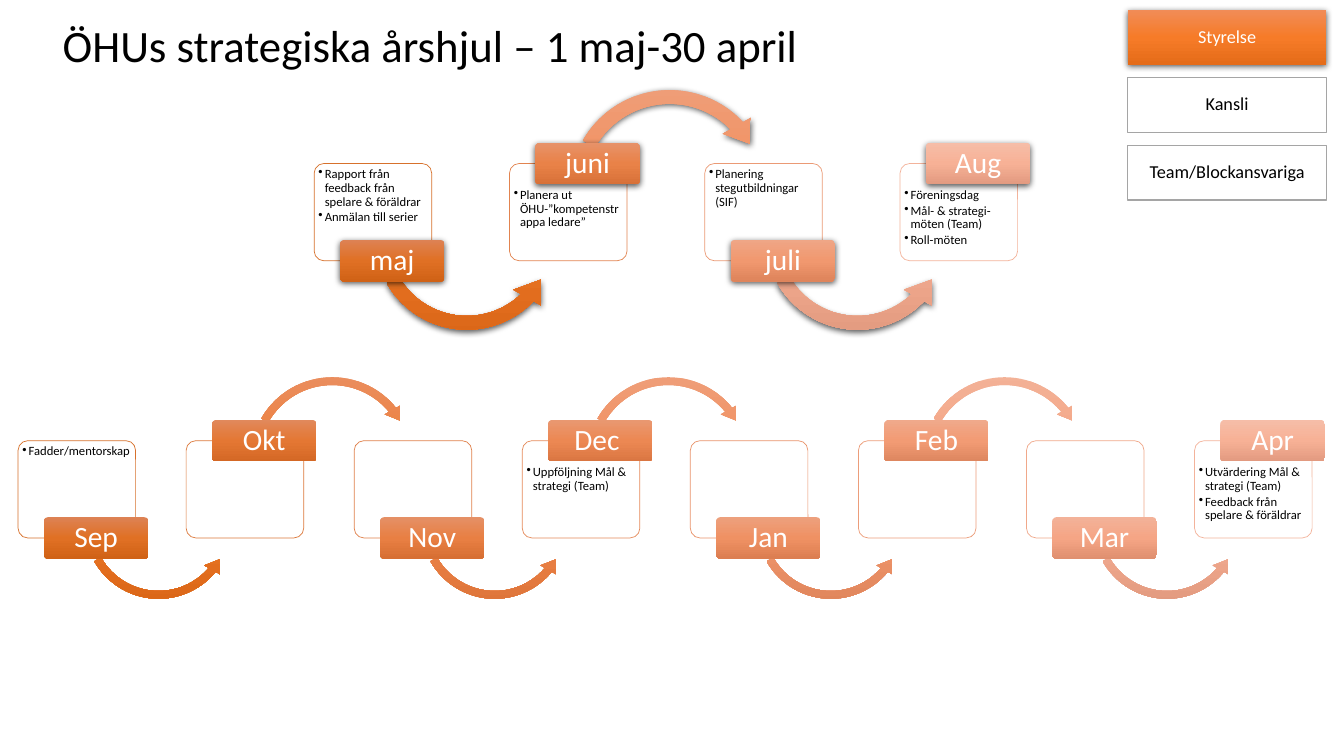
from copy import deepcopy
from dataclasses import dataclass

from pptx import Presentation
from pptx import oxml
from pptx import util as u
from pptx.dml import color
from pptx.enum import shapes, text
from pptx.oxml import ns


@dataclass(frozen=True)
class Theme:
    font: str = "Calibri"
    title_size: float = 32
    month_size: float = 21
    legend_size: float = 13
    note_size: float = 9
    black: str = "000000"
    white: str = "FFFFFF"
    grey: str = "A5A5A5"
    accent: tuple = ("F18C57", "F67B28", "E56C19")


theme = Theme()
KIND = shapes.MSO_SHAPE
SHADOW = (
    f'<a:outerShdw {ns.nsdecls("a")} blurRad="57150" dist="19050" dir="5400000" algn="ctr" rotWithShape="0">'
    f'<a:srgbClr val="{theme.black}"><a:alpha val="63000"/></a:srgbClr></a:outerShdw>'
)


def write(frame, lines, size, ink=theme.black, align=text.PP_ALIGN.CENTER,
          anchor=text.MSO_ANCHOR.MIDDLE, inset=(2.5, 2), bullet=False, after=0):
    frame.word_wrap = True
    frame.auto_size = text.MSO_AUTO_SIZE.NONE
    frame.vertical_anchor = anchor
    frame.margin_left = frame.margin_right = u.Pt(inset[0])
    frame.margin_top = frame.margin_bottom = u.Pt(inset[1])
    for number, line in enumerate(lines):
        para = frame.add_paragraph() if number else frame.paragraphs[0]
        if bullet:
            properties = para._p.get_or_add_pPr()
            properties.set("marL", str(u.Pt(4.5)))
            properties.set("indent", str(u.Pt(-4.5)))
            properties.append(oxml.parse_xml(f'<a:buChar {ns.nsdecls("a")} char="•"/>'))
        para.alignment = align
        para.line_spacing = 0.9
        para.space_before = u.Pt(0)
        para.space_after = u.Pt(after)
        span = para.add_run()
        span.text = line
        span.font.name = theme.font
        span.font.size = u.Pt(size)
        span.font.color.rgb = color.RGBColor.from_string(ink)


def add_block(kind, place, fill, line=None, width=0.5, shadow=False, adjust=()):
    """Add a shape; fill is one colour, or three for a vertical gradient."""
    block = page.shapes.add_shape(kind, *map(u.Pt, place))
    for index, value in enumerate(adjust):
        block.adjustments[index] = value
    if isinstance(fill, str):
        block.fill.solid()
        block.fill.fore_color.rgb = color.RGBColor.from_string(fill)
    else:
        block.fill.gradient()
        block.fill.gradient_angle = 270
        stop_list = block._element.spPr.find(".//" + ns.qn("a:gsLst"))
        stop_list.append(deepcopy(stop_list[-1]))
        for stop, position, shade in zip(block.fill.gradient_stops, (0, 0.5, 1), fill):
            stop.position = position
            stop.color.rgb = color.RGBColor.from_string(shade)
    if line:
        block.line.color.rgb = color.RGBColor.from_string(line)
        block.line.width = u.Pt(width)
    else:
        block.line.fill.background()
    block.shadow.inherit = False
    if shadow:
        block._element.spPr.find(ns.qn("a:effectLst")).append(oxml.parse_xml(SHADOW))
    return block


deck = Presentation()
deck.slide_width, deck.slide_height = u.Pt(960), u.Pt(540)
page = deck.slides.add_slide(deck.slide_layouts[5])

title = page.shapes.title
title.left, title.top, title.width, title.height = map(u.Pt, (37.6, 7.2, 830, 54))
write(title.text_frame, ["ÖHUs strategiska årshjul – 1 maj-30 april"], theme.title_size,
      align=text.PP_ALIGN.LEFT, inset=(7.2, 3.6))

# Month: name, notes, box outline, tab gradient, gradient of the arrow to the next month
spring_summer = [
    ("maj", ["Rapport från feedback från spelare & föräldrar", "Anmälan till serier"],
     "D7712C", ("DD8254", "E07024", "D06216"), ("E78756", "EB7626", "DB6718")),
    ("juni", ["Planera ut ÖHU-”kompetenstrappa ledare”"],
     "E28450", ("E79269", "E98248", "D87138"), ("EF9E79", "F28F5D", "DF7D4B")),
    ("juli", ["Planering stegutbildningar (SIF)"],
     "EB9A75", ("EFA686", "F1986F", "DE845B"), ("F5BCA8", "F7B096", "E29A7F")),
    ("Aug", ["Föreningsdag", "Mål- & strategi-möten (Team)", "Roll-möten"],
     "F3B39B", ("F6BDA8", "F7B196", "E29A80"), None),
]
autumn_winter = [
    ("Sep", ["Fadder/mentorskap"],
     "D7712C", ("DD8254", "E07024", "D06216"), ("E78756", "EB7626", "DB6718")),
    ("Okt", [], "DC793B", ("E1895C", "E47733", "D46825"), ("EA8E5F", "EE7E38", "DD6D29")),
    ("Nov", [], "E0814B", ("E59066", "E87F43", "D76F33"), ("EC966B", "F0864B", "DE753A")),
    ("Dec ", ["Uppföljning Mål & strategi (Team)"],
     "E58A5A", ("E99871", "EC8853", "DA7642"), ("EF9E79", "F28F5D", "DF7D4B")),
    ("Jan", [], "E9936A", ("EDA07D", "EF9163", "DC7E51"), ("F1A788", "F49A70", "E0865C")),
    ("Feb", [], "EC9D7A", ("F0A98B", "F29B74", "DE8760"), ("F3B297", "F5A483", "E18F6E")),
    ("Mar", [], "F0A88A", ("F3B299", "F5A585", "E09070"), ("F5BCA8", "F7B096", "E29A7F")),
    ("Apr", ["Utvärdering Mål & strategi (Team)", "Feedback från spelare & föräldrar"],
     "F3B39B", ("F6BDA8", "F7B196", "E29A80"), None),
]

# Arrow: kind, left and top from the box corner, diameter, adjustments
wide_arrows = [
    (KIND.LEFT_CIRCULAR_ARROW, 36.7, -19.5, 144.7, (0.068, 9.122, 26.878, 90.245, 0.079)),
    (KIND.CIRCULAR_ARROW, 36.7, -59, 155.5, (0.063, 8.394, 189.851, 125.755, 0.074)),
]
narrow_arrows = [
    (KIND.LEFT_CIRCULAR_ARROW, 43.9, 3.6, 113, (0.049, 6.26, 24.015, 90.245, 0.057)),
    (KIND.CIRCULAR_ARROW, 42.5, -49, 123.8, (0.045, 5.653, 192.592, 125.755, 0.052)),
]
BOX_WIDTH, BOX_HEIGHT = 84, 69.5
TAB_WIDTH, TAB_HEIGHT = 74.6, 29.7

for months, arrows, row_left, row_top, pitch, shadow in (
    (spring_summer, wide_arrows, 224.4, 116.8, 139.5, True),
    (autumn_winter, narrow_arrows, 12.9, 314.8, 120.05, False),
):
    for index, (name, notes, outline, tab_fill, arrow_fill) in enumerate(months):
        left = row_left + index * pitch
        tab_on_top = index % 2
        add_block(KIND.ROUNDED_RECTANGLE, (left, row_top, BOX_WIDTH, BOX_HEIGHT),
                  theme.white, line=outline, adjust=(0.1,))
        if notes:
            note_top = row_top + (16.5 if tab_on_top else 1.6)
            note_box = page.shapes.add_textbox(
                *map(u.Pt, (left + 1.6, note_top, BOX_WIDTH - 3.2, 51.3)))
            write(note_box.text_frame, notes, theme.note_size, align=text.PP_ALIGN.LEFT,
                  anchor=text.MSO_ANCHOR.TOP, inset=(1.5, 1.5), bullet=True, after=1.35)
        if arrow_fill:
            kind, across, down, diameter, adjust = arrows[tab_on_top]
            add_block(kind, (left + across, row_top + down, diameter, diameter),
                      arrow_fill, shadow=shadow, adjust=adjust)
        tab_middle = row_top if tab_on_top else row_top + BOX_HEIGHT
        tab = add_block(KIND.ROUNDED_RECTANGLE,
                        (left + 18.5, tab_middle - TAB_HEIGHT / 2, TAB_WIDTH, TAB_HEIGHT),
                        tab_fill, shadow=shadow, adjust=(0.1,))
        write(tab.text_frame, [name], theme.month_size, ink=theme.white)

for index, (role, fill, line, ink) in enumerate((
    ("Styrelse", theme.accent, None, theme.white),
    ("Kansli", theme.white, theme.grey, theme.black),
    ("Team/Blockansvariga", theme.white, theme.grey, theme.black),
)):
    legend = add_block(KIND.RECTANGLE, (805.5, 7.2 + index * 48.3, 142, 39), fill,
                       line=line, width=1, shadow=line is None)
    write(legend.text_frame, [role], theme.legend_size, ink=ink, inset=(7.2, 1.5))

deck.save("out.pptx")
